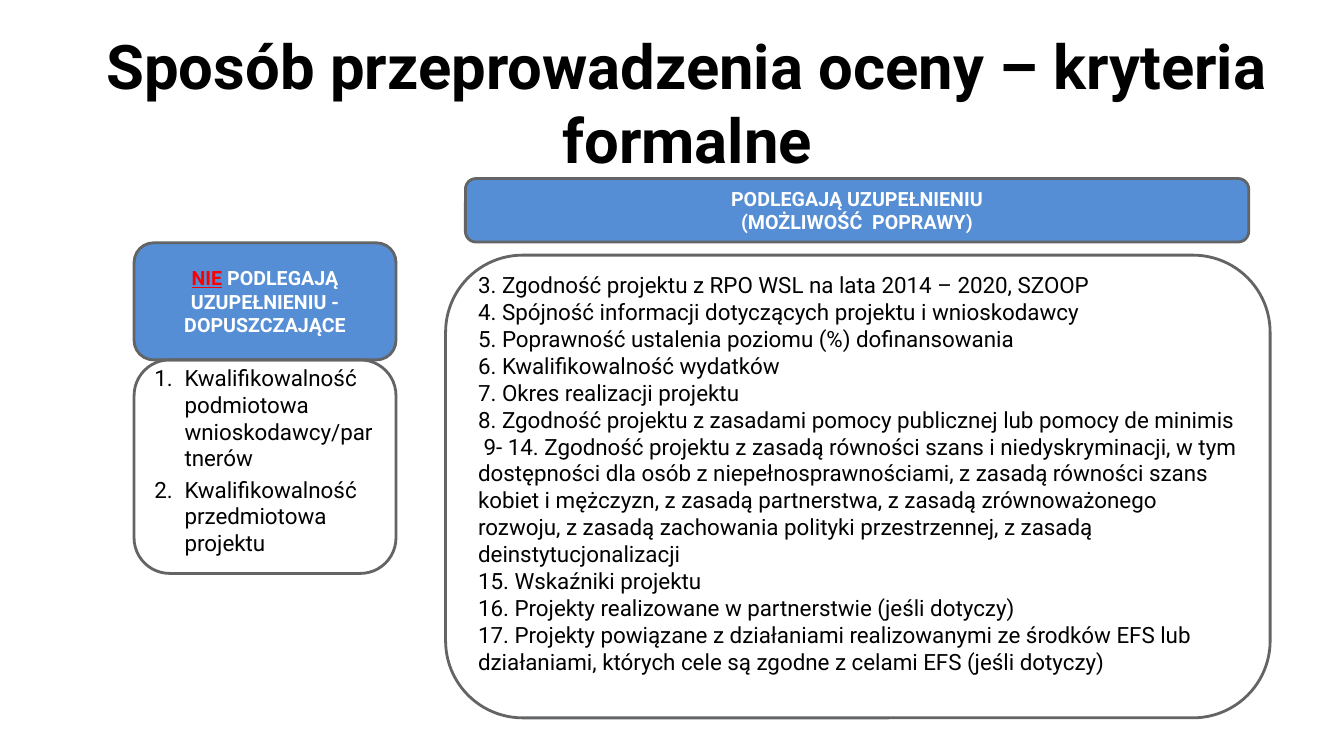
from dataclasses import dataclass

from lxml.etree import SubElement
from pptx import Presentation
from pptx.dml.color import RGBColor
from pptx.enum.shapes import MSO_SHAPE
from pptx.enum.text import MSO_ANCHOR, PP_ALIGN
from pptx.oxml.ns import qn
from pptx.util import Cm, Pt

COLORS = {"blue": "558ED5", "gray": "636466", "red": "FF0000",
          "white": "FFFFFF", "black": "000000"}
FONT = "Roboto"


@dataclass
class Panel:
    left: float
    top: float
    width: float
    height: float
    lines: list[str]
    size: int = 16
    color: str = "black"
    bold: bool = False
    fill: str = ""
    frame: bool = True
    center: bool = False
    number: bool = False
    alert: str = ""  # red, underlined opening word
    above: float = 0.13
    below: float = 0.13


def shade(name: str) -> RGBColor:
    return RGBColor.from_string(COLORS[name])


def add_number(para) -> None:
    props = para._p.get_or_add_pPr()
    props.set("marL", str(Cm(0.76)))
    props.set("indent", str(-Cm(0.76)))
    SubElement(props, qn("a:buFont"), typeface=FONT)
    SubElement(props, qn("a:buAutoNum"), type="arabicPeriod")


def add_text(frame, panel: Panel) -> None:
    frame.word_wrap = True
    frame.vertical_anchor = MSO_ANCHOR.MIDDLE
    frame.margin_top, frame.margin_bottom = Cm(panel.above), Cm(panel.below)
    for index, line in enumerate(panel.lines):
        para = frame.add_paragraph() if index else frame.paragraphs[0]
        para.alignment = PP_ALIGN.CENTER if panel.center else PP_ALIGN.LEFT
        if panel.number:
            add_number(para)
            if index:
                para.space_before = Pt(3)
        font = para.font
        font.name, font.size, font.bold = FONT, Pt(panel.size), panel.bold
        font.color.rgb = shade(panel.color)
        if panel.alert and not index:
            run = para.add_run()
            run.text = panel.alert
            run.font.color.rgb = shade("red")
            run.font.underline = True
        para.add_run().text = line


def add_panel(slide, panel: Panel) -> None:
    area = [Cm(x) for x in (panel.left, panel.top, panel.width, panel.height)]
    if panel.frame:
        shape = slide.shapes.add_shape(MSO_SHAPE.ROUNDED_RECTANGLE, *area)
        shape.shadow.inherit = False
        shape.line.color.rgb = shade("gray")
        shape.line.width = Pt(2)
        if panel.fill:
            shape.fill.solid()
            shape.fill.fore_color.rgb = shade(panel.fill)
        else:
            shape.fill.background()
    else:
        shape = slide.shapes.add_textbox(*area)
    add_text(shape.text_frame, panel)


PANELS = [
    # Headers
    Panel(3.38, 6.12, 6.6, 2.95, [" PODLEGAJĄ UZUPEŁNIENIU - DOPUSZCZAJĄCE"],
          14, "white", True, "blue", center=True, alert="NIE"),
    Panel(11.73, 4.5, 19.74, 1.6,
          ["PODLEGAJĄ UZUPEŁNIENIU", "(MOŻLIWOŚĆ  POPRAWY)"],
          14, "white", True, "blue", center=True),
    # Criteria that can be corrected
    Panel(11.23, 6.43, 20.78, 11.66, [
        "3. Zgodność projektu z RPO WSL na lata 2014 – 2020, SZOOP",
        "4. Spójność informacji dotyczących projektu i wnioskodawcy",
        "5. Poprawność ustalenia poziomu (%) dofinansowania",
        "6. Kwalifikowalność wydatków",
        "7. Okres realizacji projektu",
        "8. Zgodność projektu z zasadami pomocy publicznej lub pomocy "
        "de minimis",
        " 9- 14. Zgodność projektu z zasadą równości szans i "
        "niedyskryminacji, w tym dostępności dla osób z "
        "niepełnosprawnościami, z zasadą równości szans kobiet i mężczyzn, "
        "z zasadą partnerstwa, z zasadą zrównoważonego rozwoju, z zasadą "
        "zachowania polityki przestrzennej, z zasadą deinstytucjonalizacji",
        "15. Wskaźniki projektu",
        "16. Projekty realizowane w partnerstwie (jeśli dotyczy)",
        "17. Projekty powiązane z działaniami realizowanymi ze środków EFS "
        "lub działaniami, których cele są zgodne z celami EFS "
        "(jeśli dotyczy)",
    ], below=0.81),
    # Criteria that cannot be corrected
    Panel(3.38, 9.07, 6.6, 5.38, [
        "Kwalifikowalność podmiotowa wnioskodawcy/partnerów",
        "Kwalifikowalność przedmiotowa projektu",
    ], number=True, above=0.23, below=0.56),
    # Title
    Panel(2.08, 0.97, 30.48, 3.18,
          ["Sposób przeprowadzenia oceny – kryteria formalne"],
          44, bold=True, frame=False, center=True),
]


def main() -> None:
    deck = Presentation()
    deck.slide_width, deck.slide_height = Cm(33.87), Cm(19.05)
    slide = deck.slides.add_slide(deck.slide_layouts[6])
    for panel in PANELS:
        add_panel(slide, panel)
    deck.save("out.pptx")


if __name__ == "__main__":
    main()
